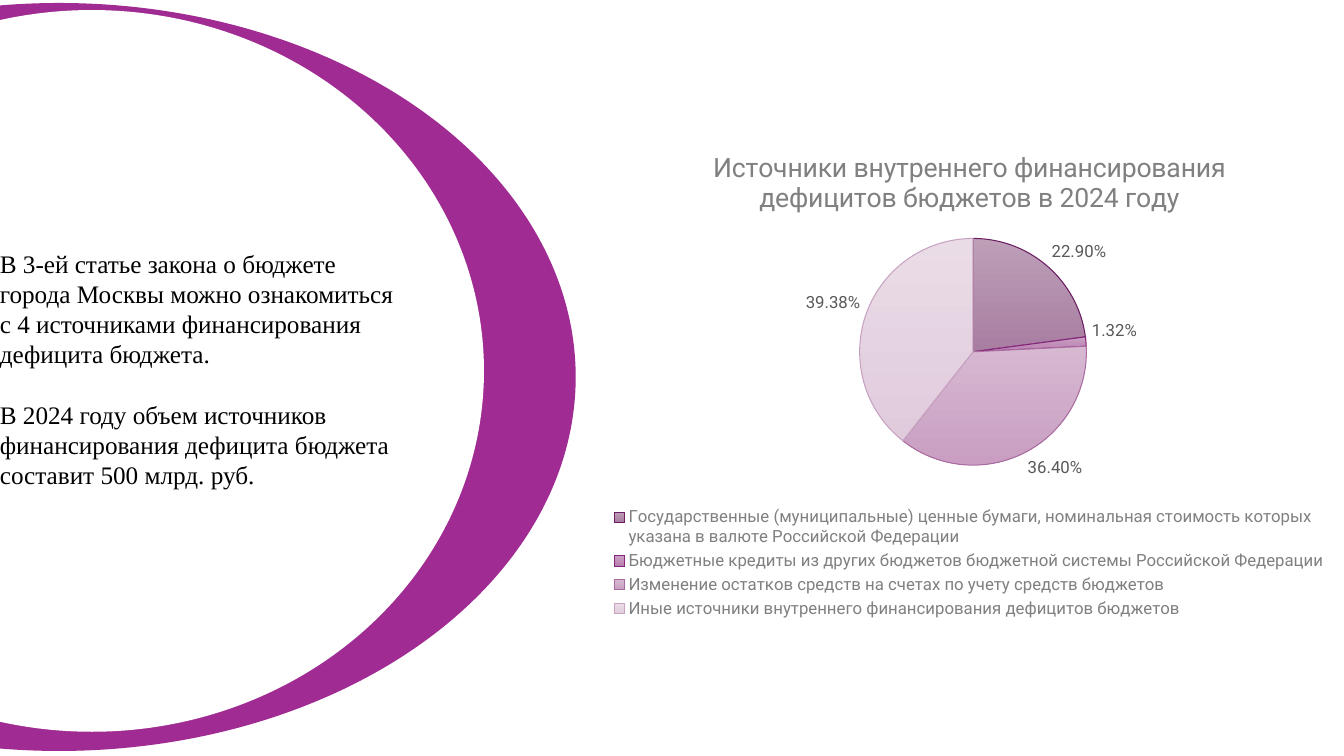
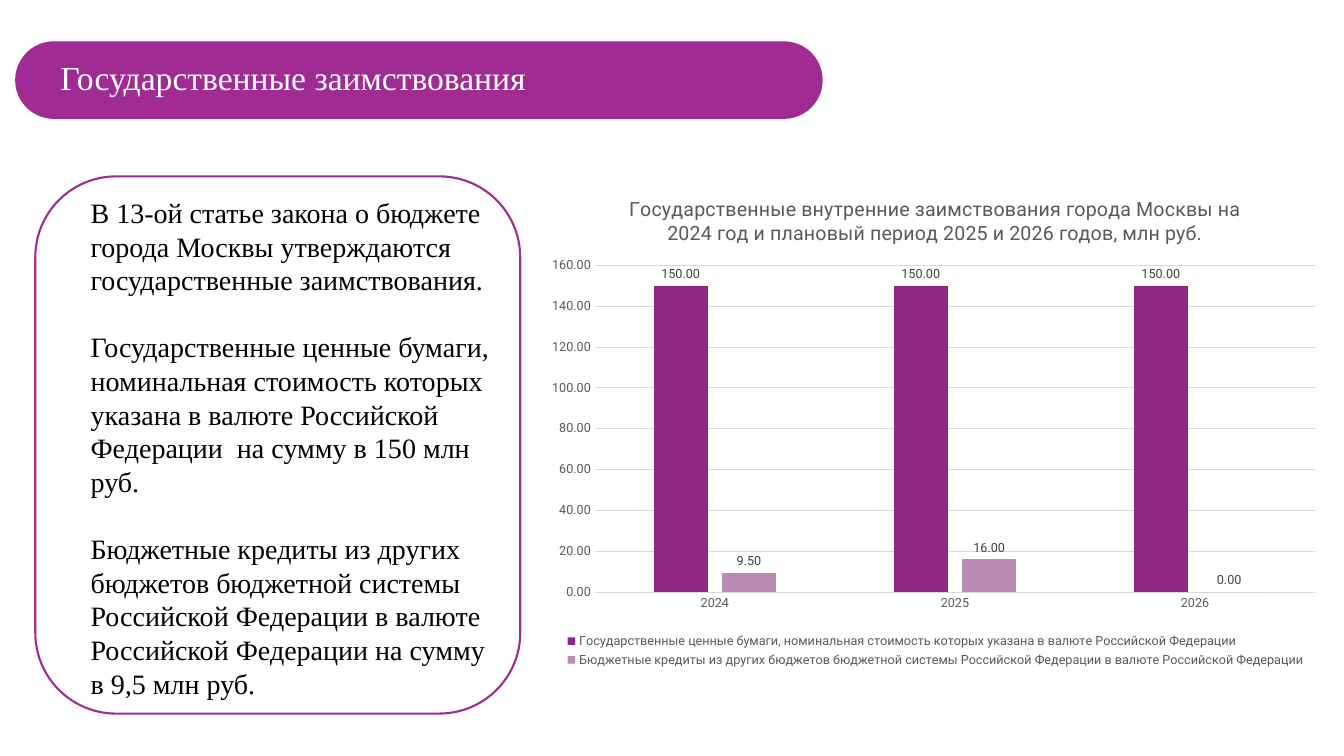
from pptx import Presentation
from pptx.chart.data import CategoryChartData
from pptx.dml.color import RGBColor
from pptx.enum.chart import XL_CHART_TYPE, XL_LABEL_POSITION, XL_LEGEND_POSITION, XL_TICK_MARK
from pptx.enum.shapes import MSO_SHAPE
from pptx.enum.text import MSO_ANCHOR, MSO_AUTO_SIZE, PP_ALIGN
from pptx.oxml import parse_xml
from pptx.oxml.ns import nsdecls, qn
from pptx.util import Inches, Pt

PIE = XL_CHART_TYPE.PIE
COLUMN = XL_CHART_TYPE.COLUMN_CLUSTERED
OUT = XL_LABEL_POSITION.OUTSIDE_END
BOTTOM = XL_LEGEND_POSITION.BOTTOM
NONE = XL_TICK_MARK.NONE
DISC = MSO_SHAPE.FLOWCHART_CONNECTOR
ROUND = MSO_SHAPE.ROUNDED_RECTANGLE
TOP = MSO_ANCHOR.TOP
FIXED = MSO_AUTO_SIZE.NONE
LEFT = PP_ALIGN.LEFT

SERIF, SANS = "Times New Roman", "Roboto"
HEX = {
    "plum": "A02B93", "white": "FFFFFF", "black": "000000",
    "gray": "808080", "dark": "595959", "label": "404040", "grid": "D9D9D9",
    "deep": "8E2682", "pale": "BC8AB4",
}
# Pie slices: gradient top, gradient bottom, outline
SLICES = [
    ("BD9FB8", "A87EA1", "6C1D63"),
    ("CAA0C3", "B97FB0", "84237A"),
    ("D6B8D1", "C99EC2", "AA6BA0"),
    ("EADCE7", "E0CBDC", "C8A3C1"),
]
FRAME = {"word_wrap": True, "auto_size": FIXED, "vertical_anchor": TOP}

INTRO = [
    "В 3-ей статье закона о бюджете города Москвы можно ознакомиться с 4 источниками финансирования дефицита бюджета.",
    "В 2024 году объем источников финансирования дефицита бюджета составит 500 млрд. руб.",
]
LOANS = [
    "В 13-ой статье закона о бюджете города Москвы утверждаются государственные заимствования.",
    "Государственные ценные бумаги, номинальная стоимость которых указана в валюте Российской Федерации  на сумму в 150 млн руб.",
    "Бюджетные кредиты из других бюджетов бюджетной системы Российской Федерации в валюте Российской Федерации на сумму в 9,5 млн руб.",
]
FUNDS = {
    "Государственные (муниципальные) ценные бумаги, номинальная стоимость которых указана в валюте Российской Федерации": 0.229,
    "Бюджетные кредиты из других бюджетов бюджетной системы Российской Федерации": 0.0132,
    "Изменение остатков средств на счетах по учету средств бюджетов": 0.364,
    "Иные источники внутреннего финансирования дефицитов бюджетов": 0.3938,
}
DEBTS = {
    "Государственные ценные бумаги, номинальная стоимость которых указана в валюте Российской Федерации": (150, 150, 150),
    "Бюджетные кредиты из других бюджетов бюджетной системы Российской Федерации в валюте Российской Федерации": (9.5, 16, 0),
}


def rgb(code):
    return RGBColor.from_string(HEX.get(code, code))


def put(item, vals):
    for key, val in vals.items():
        setattr(item, key, val)


def style(font, size, color, face=SANS):
    put(font, {"size": Pt(size), "name": face, "bold": False})
    font.color.rgb = rgb(color)


def stroke(line, color, width=0.75):
    line.color.rgb = rgb(color)
    line.width = Pt(width)


def add_form(slide, kind, box, fill, edge=None):
    form = slide.shapes.add_shape(kind, *map(Inches, box))
    form.shadow.inherit = False
    form.fill.solid()
    form.fill.fore_color.rgb = rgb(fill)
    if edge:
        stroke(form.line, edge, 1.5)
    else:
        form.line.fill.background()
    return form


def add_text(slide, box, paras, size, gap):
    frame = slide.shapes.add_textbox(*map(Inches, box)).text_frame
    put(frame, FRAME)
    for i, words in enumerate(paras):
        para = frame.paragraphs[0] if i == 0 else frame.add_paragraph()
        para.text = words
        style(para.font, size, "black", SERIF)
        if i < len(paras) - 1:
            para.space_after = Pt(gap)


def add_title(slide, box, words):
    # The pill lies behind the title, so the title moves to the front
    add_form(slide, ROUND, (0.15, 0.41, 8.01, 0.77), "plum").adjustments[0] = 0.5
    title = slide.shapes.title
    put(title, dict(zip(("left", "top", "width", "height"), map(Inches, box))))
    title.element.getparent().append(title.element)
    put(title.text_frame, FRAME)
    title.text_frame.text = words
    para = title.text_frame.paragraphs[0]
    para.alignment = LEFT
    style(para.font, 24, "white", SERIF)


def set_plot(chart, place):
    area = chart._chartSpace.find(".//" + qn("c:plotArea"))
    old = area.find(qn("c:layout"))
    if old is not None:
        area.remove(old)
    sides = "".join(f'<c:{k} val="{v}"/>' for k, v in zip("xywh", place))
    area.insert(0, parse_xml(
        f'<c:layout {nsdecls("c")}><c:manualLayout><c:layoutTarget val="inner"/>'
        f'<c:xMode val="edge"/><c:yMode val="edge"/>{sides}</c:manualLayout></c:layout>'))


def add_chart(slide, kind, box, cats, rows, head, look):
    data = CategoryChartData()
    data.categories = cats
    for name, vals in rows.items():
        data.add_series(name, vals)
    chart = slide.shapes.add_chart(kind, *map(Inches, box), data).chart
    style(chart.font, 10, "black")
    # Heading
    chart.has_title = True
    frame = chart.chart_title.text_frame
    frame.text = head
    style(frame.paragraphs[0].runs[0].font, look["head"], look["tone"])
    # Legend
    chart.has_legend = True
    put(chart.legend, {"position": BOTTOM, "include_in_layout": False})
    style(chart.legend.font, look["size"], look["tone"])
    # Labels
    chart.plots[0].vary_by_categories = kind == PIE
    for row in chart.plots[0].series:
        labels = row.data_labels
        put(labels, {"show_value": True, "position": OUT,
                     "number_format": look["form"], "number_format_is_linked": False})
        style(labels.font, look["size"], look["label"])
    set_plot(chart, look["plot"])
    return chart


def tint_pie(chart):
    row = chart.plots[0].series[0]
    for i, (start, end, edge) in enumerate(SLICES):
        part = row.points[i].format
        part.fill.gradient()
        part.fill.gradient_angle = 270
        for stop, color, pos in zip(part.fill.gradient_stops, (start, end), (0, 1)):
            stop.color.rgb = rgb(color)
            stop.position = pos
        stroke(part.line, edge)


def tint_bars(chart):
    plot = chart.plots[0]
    put(plot, {"gap_width": 219, "overlap": -27})
    for row, color in zip(plot.series, ("deep", "pale")):
        row.format.fill.solid()
        row.format.fill.fore_color.rgb = rgb(color)
    cat, val = chart.category_axis, chart.value_axis
    for axis in (cat, val):
        put(axis, {"major_tick_mark": NONE, "minor_tick_mark": NONE})
        style(axis.tick_labels.font, 9, "dark")
    stroke(cat.format.line, "grid")
    put(val, {"minimum_scale": 0, "maximum_scale": 160, "major_unit": 20})
    put(val.tick_labels, {"number_format": "#,##0.00", "number_format_is_linked": False})
    val.format.line.fill.background()
    stroke(val.major_gridlines.format.line, "grid")


def show_funds(deck):
    slide = deck.slides.add_slide(deck.slide_layouts[6])
    # Crescent of two discs
    add_form(slide, DISC, (-4.54, 0.03, 10.25, 7.42), "plum")
    add_form(slide, DISC, (-2.98, 0.1, 7.78, 7.16), "white")
    add_text(slide, (-0.1, 2.41, 4.18, 2.83), INTRO, 18, 21.5)
    look = {"head": 19, "tone": "gray", "size": 12, "label": "dark",
            "form": "0.00%", "plot": (0.35, 0.22, 0.31, 0.46)}
    chart = add_chart(slide, PIE, (5.98, 1.29, 7.27, 4.89), list(FUNDS),
                      {"Series 1": list(FUNDS.values())},
                      "Источники внутреннего финансирования дефицитов бюджетов в 2024 году", look)
    tint_pie(chart)


def show_loans(deck):
    slide = deck.slides.add_slide(deck.slide_layouts[5])
    add_title(slide, (0.5, 0.51, 7.25, 0.5), "Государственные заимствования")
    # Framed text
    add_form(slide, ROUND, (0.35, 1.75, 4.81, 5.33), "white", "plum")
    add_text(slide, (0.8, 1.89, 4.15, 5.19), LOANS, 20, 24)
    look = {"head": 14, "tone": "dark", "size": 9, "label": "label",
            "form": "#,##0.00", "plot": (0.07, 0.18, 0.91, 0.66)}
    chart = add_chart(slide, COLUMN, (5.35, 1.75, 7.85, 4.91), ["2024", "2025", "2026"], DEBTS,
                      "Государственные внутренние заимствования города Москвы на 2024 год "
                      "и плановый период 2025 и 2026 годов, млн руб.", look)
    tint_bars(chart)


def main():
    deck = Presentation()
    put(deck, {"slide_width": Inches(13.33), "slide_height": Inches(7.5)})
    show_funds(deck)
    show_loans(deck)
    deck.save("out.pptx")


if __name__ == "__main__":
    main()
